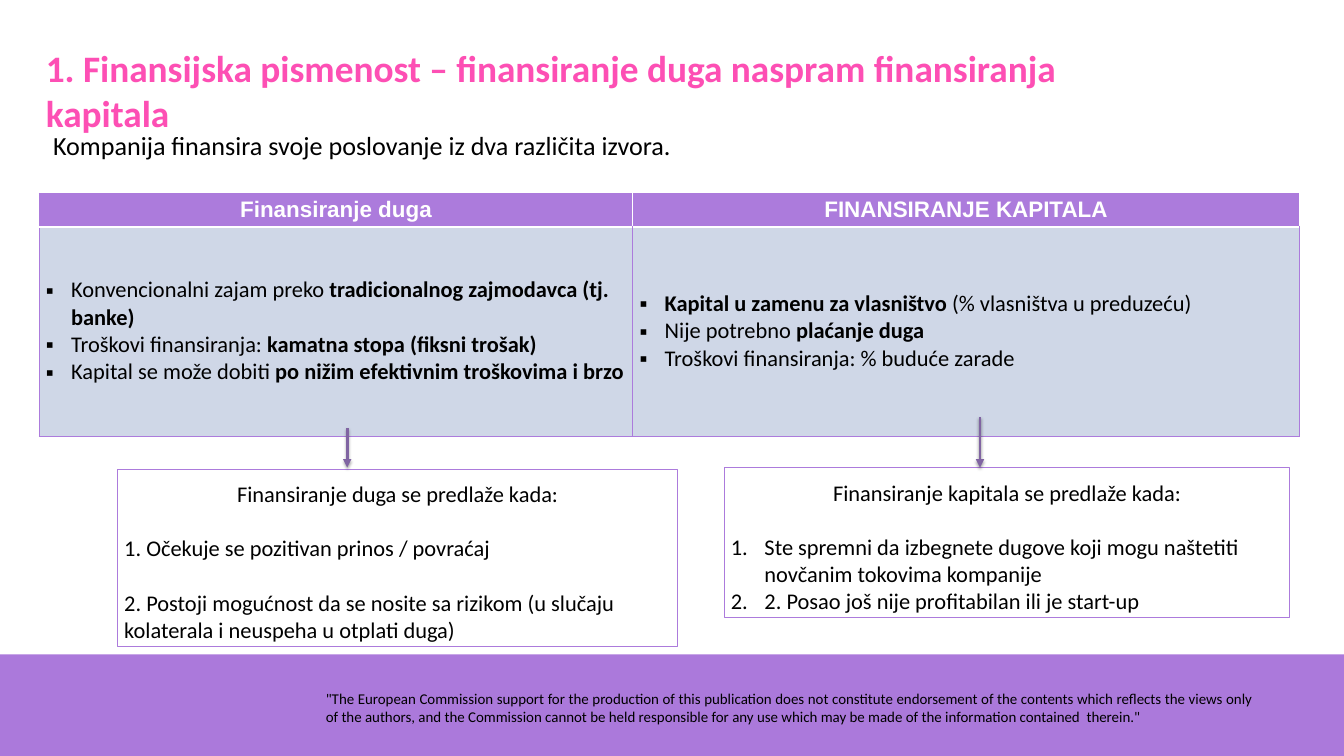
from dataclasses import dataclass, field

import lxml.etree
import pptx
import pptx.dml.color
import pptx.enum.shapes
import pptx.enum.text
import pptx.oxml.ns
import pptx.util

Pt = pptx.util.Pt
qn = pptx.oxml.ns.qn
ALIGN = pptx.enum.text.PP_ALIGN

COLORS = {
    "purple": "AC7BDC",
    "band": "AB79DB",
    "pink": "FD4FB4",
    "cell": "CFD7E7",
    "arrow": "8064A2",
    "black": "000000",
    "white": "FFFFFF",
}
BODY = {"name": "Calibri", "size": Pt(24)}
HEAD = {"name": "Arial", "size": Pt(24), "bold": True}
TITLE = {"name": "Calibri", "size": Pt(40), "bold": True}
LEAD = {"name": "Calibri", "size": Pt(28)}
NOTE = {"name": "Calibri", "size": Pt(16)}
BULLET = ("buChar", {"char": "▪"}, 27)
NUMBER = ("buAutoNum", {"type": "arabicPeriod"}, 36)


@dataclass
class Para:
    text: str
    mark: tuple | None = None
    form: dict = field(default_factory=dict)


@dataclass
class Box:
    left: float
    top: float
    width: float
    height: float
    paras: list[Para]
    font: dict
    color: str = "black"
    inset: dict = field(default_factory=dict)
    frame: bool = False


@dataclass
class Arrow:
    x: float
    top: float
    end: float


def rgb(name: str) -> pptx.dml.color.RGBColor:
    return pptx.dml.color.RGBColor.from_string(COLORS[name])


def apply(target, values: dict) -> None:
    for key, value in values.items():
        setattr(target, key, value)


def child(parent, tag: str, **attrs: str):
    return lxml.etree.SubElement(parent, qn(f"a:{tag}"), attrs)


def tint(parent, name: str):
    return child(child(parent, "solidFill"), "srgbClr", val=COLORS[name])


def add_mark(line, mark: tuple) -> None:
    tag, attrs, indent = mark
    props = line._p.get_or_add_pPr()
    props.set("marL", str(Pt(indent)))
    props.set("indent", str(-Pt(indent)))
    child(child(props, "buClr"), "srgbClr", val=COLORS["black"])
    if tag == "buChar":
        child(props, "buFont", typeface="Arial")
    child(props, tag, **attrs)


def write(frame, paras: list[Para], font: dict, color: str) -> None:
    for i, para in enumerate(paras):
        line = frame.paragraphs[0] if i == 0 else frame.add_paragraph()
        if para.mark:
            add_mark(line, para.mark)
        apply(line, para.form)
        for j, part in enumerate(para.text.split("**")):
            if part:
                run = line.add_run()
                run.text = part
                apply(run.font, {"bold": j % 2 == 1} | font)
                run.font.color.rgb = rgb(color)


def draw_rect(slide, left: float, top: float, width: float, height: float):
    kind = pptx.enum.shapes.MSO_SHAPE.RECTANGLE
    shape = slide.shapes.add_shape(kind, Pt(left), Pt(top), Pt(width), Pt(height))
    shape.shadow.inherit = False
    return shape


def draw_box(slide, box: Box) -> None:
    place = (box.left, box.top, box.width, box.height)
    if box.frame:
        shape = draw_rect(slide, *place)
        shape.fill.background()
        shape.line.color.rgb = rgb("purple")
        shape.line.width = Pt(0.75)
    else:
        shape = slide.shapes.add_textbox(*map(Pt, place))
    frame = shape.text_frame
    top = pptx.enum.text.MSO_ANCHOR.TOP
    apply(frame, {"word_wrap": True, "vertical_anchor": top} | box.inset)
    write(frame, box.paras, box.font, box.color)


def draw_arrow(slide, arrow: Arrow) -> None:
    kind = pptx.enum.shapes.MSO_CONNECTOR.STRAIGHT
    x = Pt(arrow.x)
    line = slide.shapes.add_connector(kind, x, Pt(arrow.top), x, Pt(arrow.end))
    line.line.color.rgb = rgb("arrow")
    line.line.width = Pt(3)
    props = line._element.spPr
    child(props.find(qn("a:ln")), "tailEnd", type="triangle")
    shade = child(child(props, "effectLst"), "outerShdw", blurRad=str(Pt(3.1)),
                  dist=str(Pt(1.8)), dir="5400000", rotWithShape="0")
    child(child(shade, "srgbClr", val=COLORS["black"]), "alpha", val="35000")


def draw_cell(cell, paras: list[Para], font: dict, color: str,
              fill: str, edges: dict) -> None:
    props = cell._tc.get_or_add_tcPr()
    for side, (name, width) in edges.items():
        tint(child(props, f"ln{side}", w=str(Pt(width))), name)
    cell.fill.solid()
    cell.fill.fore_color.rgb = rgb(fill)
    cell.vertical_anchor = pptx.enum.text.MSO_ANCHOR.MIDDLE
    write(cell.text_frame, paras, font, color)


def draw_table(slide, heads: list[str], lists: list[list[str]]) -> None:
    widths, heights = (636, 714), (35, 224)
    shape = slide.shapes.add_table(2, 2, Pt(42), Pt(207),
                                   Pt(sum(widths)), Pt(sum(heights)))
    table = shape.table
    for col, width in zip(table.columns, widths):
        col.width = Pt(width)
    for row, height in zip(table.rows, heights):
        row.height = Pt(height)
    thin, pale, thick = ("purple", 1), ("white", 1), ("white", 3)
    for i, (head, items) in enumerate(zip(heads, lists)):
        edges = {"L": pale if i else thin, "R": pale, "T": thin, "B": thick}
        title = [Para(head, form={"alignment": ALIGN.CENTER})]
        draw_cell(table.cell(0, i), title, HEAD, "white", "purple", edges)
        edges = {"L": thin, "R": thin, "T": thick, "B": thin}
        paras = [Para(item, BULLET) for item in items]
        draw_cell(table.cell(1, i), paras, BODY, "black", "cell", edges)


def main() -> None:
    deck = pptx.Presentation()
    apply(deck, {"slide_width": Pt(1440), "slide_height": Pt(810)})
    slide = deck.slides.add_slide(deck.slide_layouts[6])

    band = draw_rect(slide, 0, 701, 1440, 109)
    band.fill.solid()
    band.fill.fore_color.rgb = rgb("band")
    band.line.fill.background()

    gap = {"space_before": Pt(29.3)}
    drop = {"margin_top": Pt(12)}
    full = {"alignment": ALIGN.JUSTIFY, "line_spacing": 1.01}
    notice = (
        "\"The European Commission support for the production of this publication "
        "does not constitute endorsement of the contents which reflects the views "
        "only of the authors, and the Commission cannot be held responsible for any "
        "use which may be made of the information contained  therein.\""
    )
    boxes = [
        Box(342, 735, 1008, 40, [Para(notice, form=full)], NOTE),
        Box(42, 44.6, 1225, 104, [Para(
            "1. Finansijska pismenost – finansiranje duga naspram finansiranja kapitala"
        )], TITLE, "pink"),
        Box(44, 135.4, 1102, 70, [Para(
            "Kompanija finansira svoje poslovanje iz dva različita izvora."
        )], LEAD, inset={"margin_left": Pt(13)}),
        Box(126, 502.6, 600, 190, [
            Para("Finansiranje duga se predlaže kada:"),
            Para("1. Očekuje se pozitivan prinos / povraćaj", form=gap),
            Para("2. Postoji mogućnost da se nosite sa rizikom "
                 "(u slučaju kolaterala i neuspeha u otplati duga)", form=gap),
        ], BODY, inset=drop, frame=True),
        Box(776, 501, 606, 161, [
            Para("Finansiranje kapitala se predlaže kada:"),
            Para("Ste spremni da izbegnete dugove koji mogu naštetiti "
                 "novčanim tokovima kompanije", NUMBER, gap),
            Para("2. Posao još nije profitabilan ili je start-up", NUMBER),
        ], BODY, inset=drop, frame=True),
    ]
    for box in boxes:
        draw_box(slide, box)

    draw_table(slide, ["Finansiranje duga", "FINANSIRANJE KAPITALA"], [
        ["Konvencionalni zajam preko **tradicionalnog zajmodavca (tj. banke)**",
         "Troškovi finansiranja: **kamatna stopa (fiksni trošak)**",
         "Kapital se može dobiti **po nižim efektivnim troškovima i brzo**"],
        ["**Kapital u zamenu za vlasništvo **(% vlasništva u preduzeću)",
         "Nije potrebno **plaćanje duga**",
         "Troškovi finansiranja: % buduće zarade"],
    ])
    for arrow in (Arrow(372, 459, 501), Arrow(1050, 447, 501)):
        draw_arrow(slide, arrow)
    deck.save("out.pptx")


if __name__ == "__main__":
    main()
